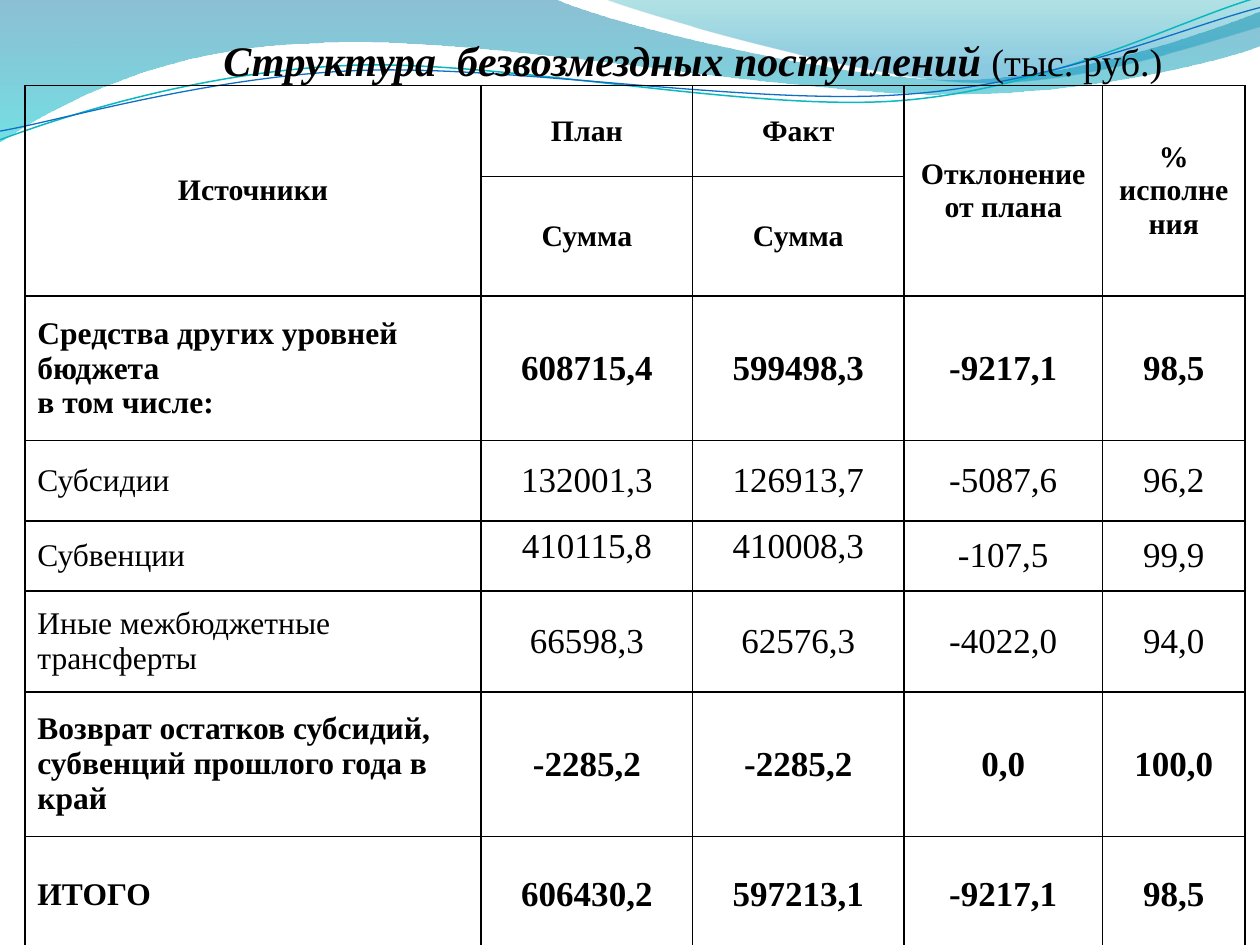
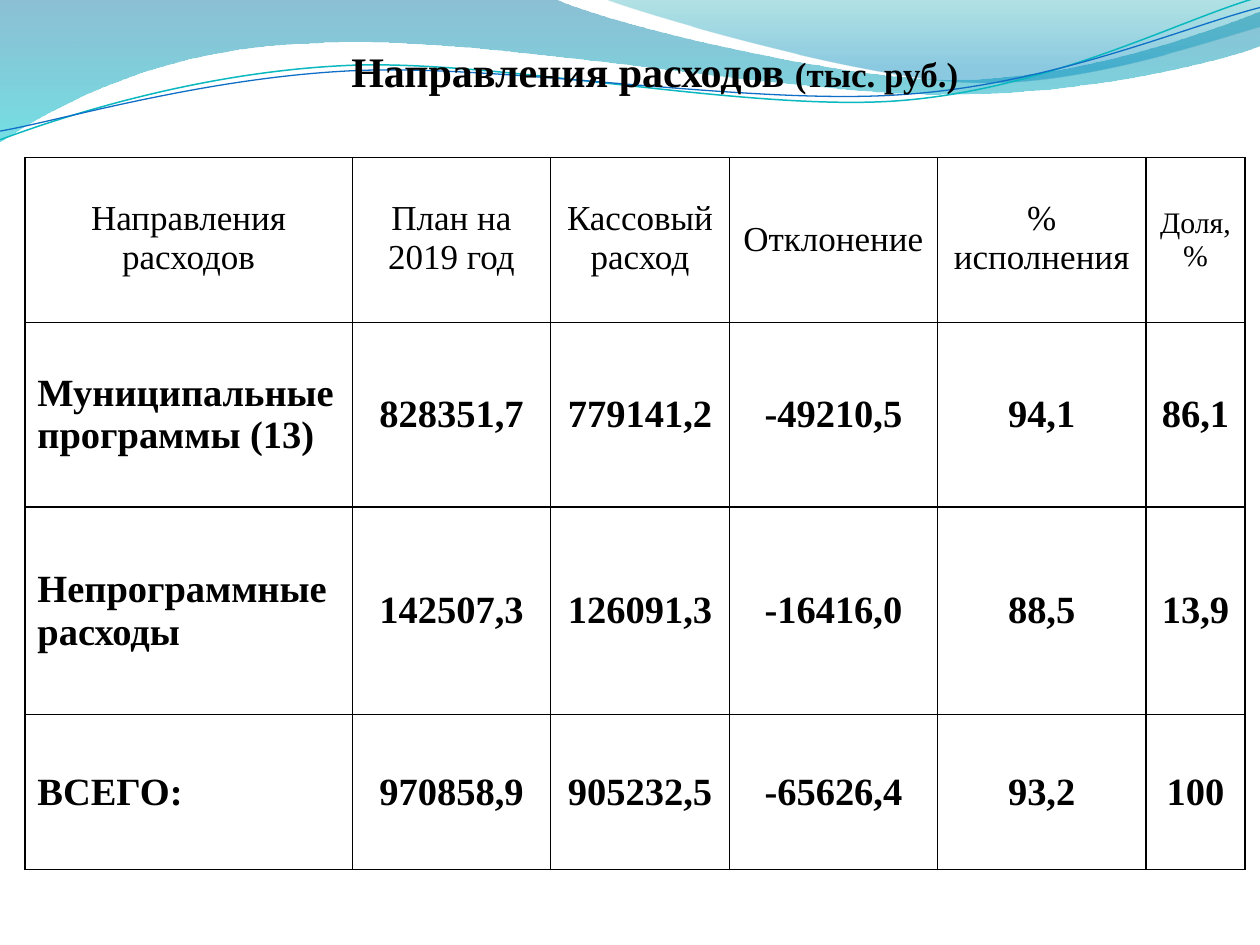
import pptx
import pptx.util
import pptx.dml.color
import pptx.enum.text
import pptx.oxml
import pptx.oxml.ns
from lxml import etree

Pt = pptx.util.Pt
qn = pptx.oxml.ns.qn
ALIGN = pptx.enum.text.PP_ALIGN
ANCHOR = pptx.enum.text.MSO_ANCHOR

FONT = "Times New Roman"
COLORS = {
    "text": "000000", "border": "000000",
    "wave_top": "0074A1", "wave_bottom": "00C6CF",
    "swell_top": "00A1A9", "swell_bottom": "008BBF",
    "teal_line": "0AB8BF", "blue_line": "0F6FC6",
}

# Outlines in points: a start, then lines (2 numbers) or cubic curves (6)
WAVE = [(-0.4, 0), (316.8, -0.7), (342.7, 12.2, 478.1, 45.4, 545.8, 45.4),
        (614.2, 45.4, 689.8, 18.7, 720, 6.5), (720.7, 25.9),
        (707.8, 31.7, 626.4, 54.7, 537.1, 54), (447.8, 54, 275, 20.2, 185, 24.5),
        (92.9, 25.9, 33.1, 59.8, -0.7, 81.4)]
SWELL = [(344.9, -0.7), (366.5, 7.9, 491, 44.6, 553.7, 46.8),
         (616.3, 49.7, 691.9, 23, 720, 15.1), (720, 0)]
TEAL_LINE = [(0, 79.9), (34.6, 67, 113.8, 41, 199.4, 37.4),
             (284.4, 33.8, 427, 64.1, 513.4, 57.6), (599.8, 51.1, 675.4, 10.8, 718.6, -1.4)]
BLUE_LINE = [(0, 74.9), (33.8, 69.1, 118.1, 43.9, 203.8, 40.3),
             (290.2, 36.7, 429.8, 60.5, 516.2, 54), (601.9, 48.2, 677.5, 15.1, 720, 4.3)]


def rgb(name):
    return pptx.dml.color.RGBColor.from_string(COLORS[name])


# Curved band at the top of every slide
def add_outline(s, box, outline, close):
    left, top = box
    ends = [(Pt(left + seg[-2]), Pt(top + seg[-1])) for seg in outline]
    builder = s.shapes.build_freeform(*ends[0])
    builder.add_line_segments(ends[1:], close=close)
    sp = builder.convert_to_shape()
    sp.shadow.inherit = False
    # Bend the straight segments that have control points
    for line, seg in zip(list(sp._element.iter(qn("a:lnTo"))), outline[1:]):
        if len(seg) == 6:
            line.tag = qn("a:cubicBezTo")
            for i in (0, 1):
                x, y = seg[2 * i:2 * i + 2]
                line.insert(i, etree.Element(qn("a:pt"), x=str(Pt(left + x) - sp.left),
                                             y=str(Pt(top + y) - sp.top)))
    return sp


def add_wave(s, box, outline, stops):
    sp = add_outline(s, box, outline, True)
    sp.line.fill.background()
    sp.fill.gradient()
    sp.fill.gradient_angle = 270
    for stop, (position, color, opacity) in zip(sp.fill.gradient_stops, stops):
        stop.position = position
        stop.color.rgb = rgb(color)
    for clr, (position, color, opacity) in zip(sp._element.spPr.iter(qn("a:srgbClr")), stops):
        etree.SubElement(clr, qn("a:alpha")).set("val", str(opacity * 1000))


def add_curve(s, box, outline, color, width):
    sp = add_outline(s, box, outline, False)
    sp.fill.background()
    sp.line.color.rgb = rgb(color)
    sp.line.width = Pt(width)


def add_band(s, box=(0, 0)):
    add_wave(s, box, WAVE, [(0, "wave_top", 45), (1, "wave_bottom", 55)])
    add_wave(s, box, SWELL, [(0, "swell_top", 30), (0.8, "swell_bottom", 45)])
    add_curve(s, box, TEAL_LINE, "teal_line", 0.85)
    add_curve(s, box, BLUE_LINE, "blue_line", 0.75)


# Text
def add_run(p, text, size, bold=False, italic=False):
    r = p.add_run()
    r.text = text
    r.font.name = FONT
    r.font.size = Pt(size)
    r.font.bold = bold
    r.font.italic = italic
    r.font.color.rgb = rgb("text")


def add_title(s, box, runs, anchor, insets):
    tf = s.shapes.add_textbox(*map(Pt, box)).text_frame
    tf.word_wrap = True
    tf.vertical_anchor = anchor
    tf.margin_left, tf.margin_top, tf.margin_right, tf.margin_bottom = map(Pt, insets)
    p = tf.paragraphs[0]
    p.alignment = ALIGN.CENTER
    for run in runs:
        add_run(p, *run)


# Tables
def add_grid(s, origin, widths, heights):
    frame = s.shapes.add_table(len(heights), len(widths), *map(Pt, origin),
                               Pt(sum(widths)), Pt(sum(heights)))
    table = frame.table
    table.first_row = table.horz_banding = False
    for column, width in zip(table.columns, widths):
        column.width = Pt(width)
    for row, height in zip(table.rows, heights):
        row.height = Pt(height)
    for cell in table.iter_cells():
        cell.fill.background()
        add_borders(cell)
    return table


def add_borders(cell):
    tcPr = cell._tc.get_or_add_tcPr()
    for i, side in enumerate(("lnL", "lnR", "lnT", "lnB")):
        ln = etree.Element(qn("a:" + side), w=str(Pt(1)))
        fill = etree.SubElement(ln, qn("a:solidFill"))
        etree.SubElement(fill, qn("a:srgbClr"), val=COLORS["border"])
        tcPr.insert(i, ln)


def fill_cell(cell, text, size, bold=False, align=ALIGN.CENTER,
              anchor=ANCHOR.MIDDLE, insets=(7.2, 3.6, 7.2, 3.6)):
    cell.vertical_anchor = anchor
    cell.margin_left, cell.margin_top, cell.margin_right, cell.margin_bottom = map(Pt, insets)
    tf = cell.text_frame
    for i, line in enumerate(text.split("\n")):
        p = tf.add_paragraph() if i else tf.paragraphs[0]
        p.alignment = align
        add_run(p, line, size, bold)


def add_income_table(s, origin):
    rows = [
        (82.5, True, "Средства других уровней бюджета\nв том числе:",
         "608715,4", "599498,3", "-9217,1", "98,5"),
        (46.1, False, "Субсидии", "132001,3", "126913,7", "-5087,6", "96,2"),
        (39.9, False, "Субвенции", "410115,8", "410008,3", "-107,5", "99,9"),
        (57.7, False, "Иные межбюджетные трансферты", "66598,3", "62576,3", "-4022,0", "94,0"),
        (82.5, True, "Возврат остатков субсидий, субвенций прошлого года в край",
         "-2285,2", "-2285,2", "0,0", "100,0"),
        (67, True, "ИТОГО", "606430,2", "597213,1", "-9217,1", "98,5"),
    ]
    table = add_grid(s, origin, [260.8, 120.8, 120.8, 113.5, 81.4],
                     [52, 31.8] + [row[0] for row in rows])
    # Two-level header
    for col, text in enumerate(["Источники", "План", "Факт", "Отклонение от плана",
                                "% исполнения"]):
        if col in (1, 2):
            fill_cell(table.cell(1, col), "Сумма", 17, True)
        else:
            table.cell(0, col).merge(table.cell(1, col))
        fill_cell(table.cell(0, col), text, 17, True)
    # Income sources
    for i, (height, bold, label, *values) in enumerate(rows, 2):
        fill_cell(table.cell(i, 0), label, 18, bold, ALIGN.LEFT)
        for col, value in enumerate(values, 1):
            style = {}
            if col > 2 or i > 5:
                style["insets"] = (0, 0, 0, 0)
            elif label == "Субвенции":
                style["anchor"] = ANCHOR.TOP
            fill_cell(table.cell(i, col), value, 20, bold, **style)


def add_spending_table(s, origin):
    header = ["Направления расходов", "План на 2019 год", "Кассовый расход",
              "Отклонение", "% исполнения", "Доля,\n%"]
    rows = [
        ("Муниципальные программы (13)", "828351,7", "779141,2", "-49210,5", "94,1", "86,1"),
        ("Непрограммные расходы", "142507,3", "126091,3", "-16416,0", "88,5", "13,9"),
        ("ВСЕГО:", "970858,9", "905232,5", "-65626,4", "93,2", "100"),
    ]
    table = add_grid(s, origin, [187.1, 113.4, 102.1, 119, 119, 56.8],
                     [94.2, 105.6, 118.6, 88.5])
    raised = {"anchor": ANCHOR.BOTTOM, "insets": (7.2, 3.6, 7.2, 25.8)}
    for col, text in enumerate(header):
        style = {} if col in (3, 5) else raised
        fill_cell(table.cell(0, col), text, 17 if col == 5 else 20, **style)
    for i, row in enumerate(rows, 1):
        for col, text in enumerate(row):
            fill_cell(table.cell(i, col), text, 22, True,
                      ALIGN.CENTER if col else ALIGN.LEFT)


# Slides
def add_slide(prs):
    s = prs.slides.add_slide(prs.slide_layouts[6])
    add_band(s)
    return s


def income_slide(prs):
    s = add_slide(prs)
    add_title(s, (72, 16.5, 648, 32),
              [("Структура  безвозмездных поступлений ", 24, True, True), ("(тыс. руб.)", 22)],
              ANCHOR.BOTTOM, (0, 3.6, 0, 0))
    add_income_table(s, (14.2, 48.8))


def spending_slide(prs):
    s = add_slide(prs)
    add_title(s, (42.7, 22.5, 663, 36),
              [("Направления расходов ", 24, True), ("(тыс. руб.)", 20, True)],
              ANCHOR.MIDDLE, (7.2, 3.6, 7.2, 3.6))
    add_spending_table(s, (14.2, 90))


def main():
    prs = pptx.Presentation()
    prs.slide_width, prs.slide_height = Pt(720), Pt(540)
    income_slide(prs)
    spending_slide(prs)
    prs.save("out.pptx")


if __name__ == "__main__":
    main()
